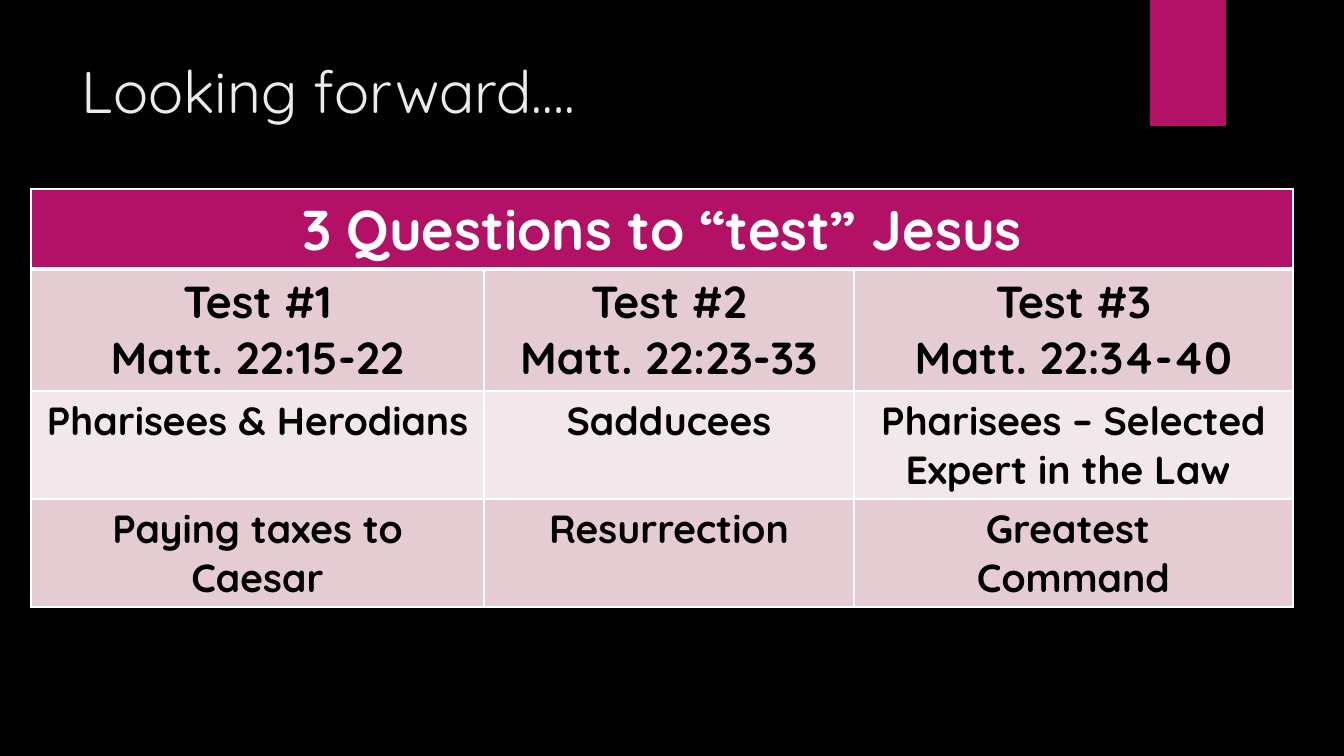
from dataclasses import dataclass

from lxml.etree import SubElement
from pptx import Presentation
from pptx.dml.color import RGBColor
from pptx.enum.shapes import MSO_SHAPE
from pptx.enum.text import MSO_ANCHOR, PP_ALIGN
from pptx.oxml.ns import qn
from pptx.slide import Slide
from pptx.table import _Cell
from pptx.util import Emu, Pt

FONT = "Quicksand"
COLORS = {
    "background": "000000",
    "accent": "B31166",
    "title": "EBEBEB",
    "white": "FFFFFF",
    "black": "000000",
    "band_dark": "E5CCD3",
    "band_light": "F2E7EA",
}


@dataclass
class Row:
    height: int
    size: int
    fill: str
    texts: list[str]
    color: str = "black"
    top: int = 1
    bottom: int = 1


COLUMN_WIDTHS = [453, 370, 439]
ROWS = [
    Row(80, 40, "accent", ["3 Questions to “test” Jesus", "", ""], "white", bottom=3),
    Row(122, 32, "band_dark", ["Test #1\nMatt. 22:15-22", "Test #2\nMatt. 22:23-33",
                               "Test #3\nMatt. 22:34-40"], top=3),
    Row(108, 28, "band_light", ["Pharisees & Herodians", "Sadducees",
                                "Pharisees – Selected Expert in the Law "]),
    Row(108, 28, "band_dark", ["Paying taxes to Caesar", "Resurrection",
                               "Greatest \nCommand"]),
]


def px(n: int) -> Emu:
    return Emu(round(n * 914400 / 100.8))


def rgb(name: str) -> RGBColor:
    return RGBColor.from_string(COLORS[name])


def add_title(s: Slide, text: str) -> None:
    tf = s.shapes.add_textbox(px(72), px(50), px(1037), px(154)).text_frame
    tf.word_wrap = True
    tf.vertical_anchor = MSO_ANCHOR.TOP
    tf.text = text
    font = tf.paragraphs[0].runs[0].font
    font.name, font.size = FONT, Pt(42)
    font.color.rgb = rgb("title")


def add_ribbon(s: Slide) -> None:
    sp = s.shapes.add_shape(MSO_SHAPE.RECTANGLE, px(1150), 0, px(76), px(126))
    sp.shadow.inherit = False
    sp.fill.solid()
    sp.fill.fore_color.rgb = rgb("accent")
    sp.line.fill.background()


def set_borders(cell: _Cell, top: int, bottom: int) -> None:
    """Draw white cell borders; widths are in points."""
    tc_pr = cell._tc.get_or_add_tcPr()
    for side, width in (("L", 1), ("R", 1), ("T", top), ("B", bottom)):
        ln = SubElement(tc_pr, qn(f"a:ln{side}"), w=str(Pt(width)))
        fill = SubElement(ln, qn("a:solidFill"))
        SubElement(fill, qn("a:srgbClr"), val=COLORS["white"])


def format_cell(cell: _Cell, row: Row, text: str) -> None:
    set_borders(cell, row.top, row.bottom)
    cell.fill.solid()
    cell.fill.fore_color.rgb = rgb(row.fill)
    cell.text_frame.text = text
    for p in cell.text_frame.paragraphs:
        p.alignment = PP_ALIGN.CENTER
        for r in p.runs:
            r.font.name, r.font.size, r.font.bold = FONT, Pt(row.size), True
            r.font.color.rgb = rgb(row.color)


def add_questions_table(s: Slide) -> None:
    table = s.shapes.add_table(
        len(ROWS), len(COLUMN_WIDTHS), px(31), px(189),
        px(sum(COLUMN_WIDTHS)), px(sum(row.height for row in ROWS)),
    ).table
    for column, width in zip(table.columns, COLUMN_WIDTHS):
        column.width = px(width)
    for i, row in enumerate(ROWS):
        table.rows[i].height = px(row.height)
        for j, text in enumerate(row.texts):
            format_cell(table.cell(i, j), row, text)
    table.cell(0, 0).merge(table.cell(0, len(COLUMN_WIDTHS) - 1))


def main() -> None:
    prs = Presentation()
    prs.slide_width, prs.slide_height = px(1344), px(756)
    s = prs.slides.add_slide(prs.slide_layouts[6])
    s.background.fill.solid()
    s.background.fill.fore_color.rgb = rgb("background")
    add_ribbon(s)
    add_title(s, "Looking forward….")
    add_questions_table(s)
    prs.save("out.pptx")


if __name__ == "__main__":
    main()
